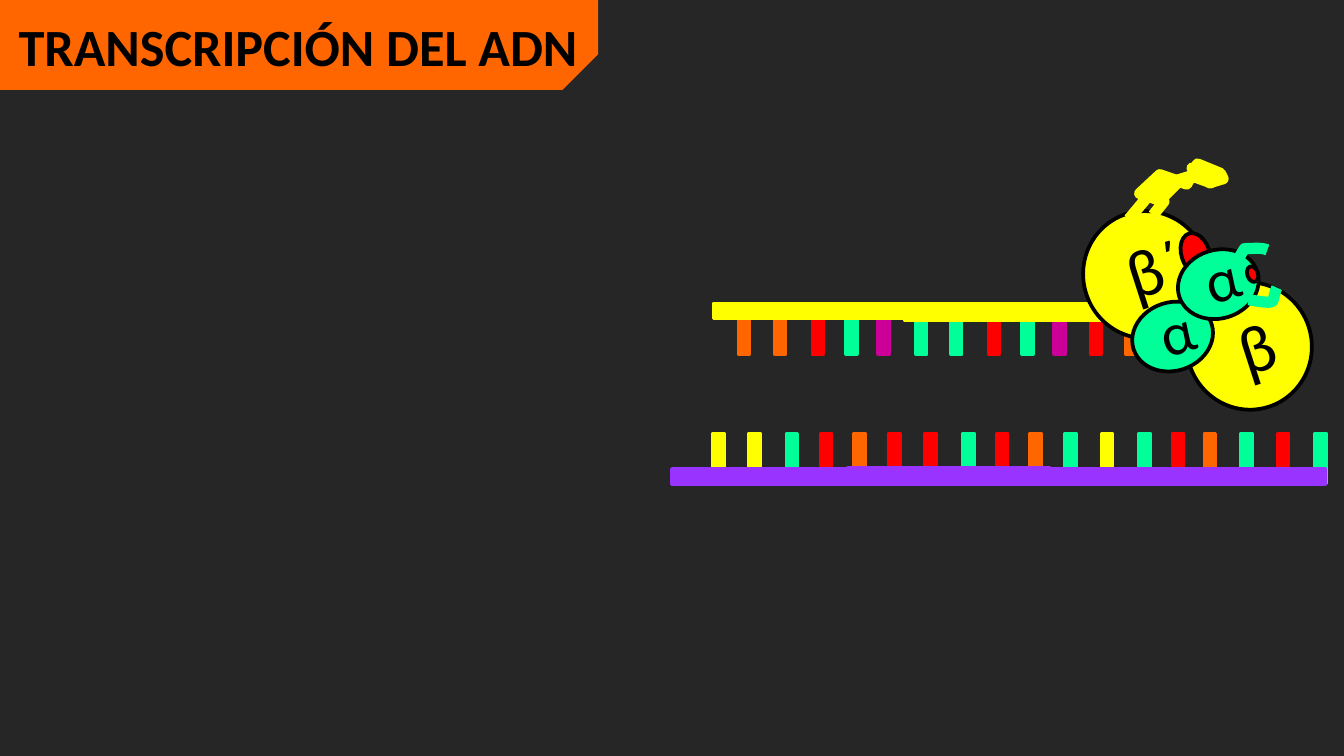
from dataclasses import dataclass

from lxml import etree
from pptx import Presentation
from pptx.dml.color import RGBColor
from pptx.enum.shapes import MSO_CONNECTOR, MSO_SHAPE
from pptx.enum.text import MSO_AUTO_SIZE
from pptx.oxml.ns import qn
from pptx.util import Inches, Pt

RECTANGLE = MSO_SHAPE.RECTANGLE
OVAL = MSO_SHAPE.OVAL
SNIPPED = MSO_SHAPE.SNIP_1_RECTANGLE
STRAIGHT = MSO_CONNECTOR.STRAIGHT
GROW = MSO_AUTO_SIZE.SHAPE_TO_FIT_TEXT


@dataclass(frozen=True)
class Theme:
    """Colours, type sizes and line widths of the slide."""
    background: str = "262626"
    ink: str = "000000"
    orange: str = "FF6600"
    yellow: str = "FFFF00"
    green: str = "00FF99"
    red: str = "FF0000"
    magenta: str = "CC0099"
    purple: str = "9933FF"
    font: str = "Calibri"
    title_size: int = 28
    alpha_size: int = 32
    beta_size: int = 36
    outline: int = 2
    thread: int = 6
    tilt: float = 342.1


THEME = Theme()
BASE_COLOURS = {"O": THEME.orange, "Y": THEME.yellow, "G": THEME.green,
                "R": THEME.red, "M": THEME.magenta}
BASE_LENGTH, BASE_THICKNESS = 0.37, 0.08
UPRIGHT = 270


def rgb(colour):
    """Turn a hex string into a colour."""
    return RGBColor.from_string(colour)


def paint(shape, fill=None, line=None, width=THEME.outline):
    """Give a shape its fill and line, without a shadow."""
    shape.shadow.inherit = False
    if fill:
        shape.fill.solid()
        shape.fill.fore_color.rgb = rgb(fill)
    else:
        shape.fill.background()
    if line:
        shape.line.color.rgb = rgb(line)
        shape.line.width = Pt(width)
    else:
        shape.line.fill.background()


def add_part(slide, kind, box, fill, line=None, rotation=0):
    """Add a painted preset shape in the given box."""
    part = slide.shapes.add_shape(kind, *map(Inches, box))
    part.rotation = rotation
    paint(part, fill, line)
    return part


def add_label(slide, box, text, size, bold=False, wrap=True, rotation=0):
    """Add a one-run text box in the given box."""
    label = slide.shapes.add_textbox(*map(Inches, box))
    label.rotation = rotation
    label.text_frame.word_wrap = wrap
    label.text_frame.auto_size = GROW
    run = label.text_frame.paragraphs[0].add_run()
    run.text = text
    run.font.name = THEME.font
    run.font.size = Pt(size)
    run.font.bold = bold
    run.font.color.rgb = rgb(THEME.ink)


def add_thread(slide, points, colour, fill=None):
    """Draw an open outline through the given points."""
    start, *rest = [(Inches(x), Inches(y)) for x, y in points]
    builder = slide.shapes.build_freeform(*start)
    builder.add_line_segments(rest, close=False)
    paint(builder.convert_to_shape(), fill, colour, THEME.thread)


def add_leg(slide, start, end, colour):
    """Draw a straight thick line between two points."""
    leg = slide.shapes.add_connector(STRAIGHT, *map(Inches, start + end))
    leg.line.color.rgb = rgb(colour)
    leg.line.width = Pt(THEME.thread)
    etree.SubElement(leg.element.spPr, qn("a:effectLst"))


def curve(start, control_1, control_2, end, steps=8):
    """Return points along a cubic curve, without its start."""
    def at(t, axis):
        u = 1 - t
        return (u ** 3 * start[axis] + 3 * u * u * t * control_1[axis]
                + 3 * u * t * t * control_2[axis] + t ** 3 * end[axis])
    return [(at(i / steps, 0), at(i / steps, 1)) for i in range(1, steps + 1)]


def add_title(slide, left, top, width, height):
    """Place the title on its banner with a snipped lower corner."""
    banner = add_part(slide, SNIPPED, (left, top, width, height), THEME.orange)
    banner.adjustments[0] = 0.395
    banner.element.spPr.xfrm.set("flipV", "1")
    add_label(slide, (left + 0.04, top + 0.06, width - 0.04, height - 0.1),
              "TRANSCRIPCIÓN DEL ADN", THEME.title_size, bold=True, wrap=False)


def add_strand(slide, left, top, bases, offsets, base_top, backbone, colour):
    """Place a row of upright bases and the backbone pieces that carry them."""
    for base, offset in zip(bases, offsets, strict=True):
        tint = BASE_COLOURS[base]
        box = (left + offset, top + base_top, BASE_LENGTH, BASE_THICKNESS)
        add_part(slide, RECTANGLE, box, tint, tint, UPRIGHT)
    for x, y, width, height in backbone:
        add_part(slide, RECTANGLE, (left + x, top + y, width, height), colour, colour)


def add_polymerase(slide, left, top):
    """Place the tilted enzyme subunits with their threads."""
    def place(points):
        return [(left + x, top + y) for x, y in points]

    def subunit(x, y, width, height, fill):
        add_part(slide, OVAL, (left + x, top + y, width, height), fill,
                 THEME.ink, THEME.tilt)

    def symbol(x, y, width, height, text, size):
        add_label(slide, (left + x, top + y, width, height), text, size,
                  rotation=THEME.tilt)

    def alpha(x, y):
        subunit(x, y, 0.61, 0.51, THEME.green)
        symbol(x + 0.11, y - 0.09, 0.32, 0.64, "α", THEME.alpha_size)

    subunit(0.77, 0.85, 0.93, 0.95, THEME.yellow)
    subunit(0, 0.32, 0.93, 0.95, THEME.yellow)
    alpha(0.36, 1)
    joints = place([(0.34, 0.38), (0.54, 0.14), (0.8, 0.06)])
    for start, end in zip(joints, joints[1:]):
        add_leg(slide, start, end, THEME.yellow)
    symbol(0.22, 0.37, 0.69, 0.71, "β´", THEME.beta_size)
    subunit(0.73, 0.48, 0.21, 0.32, THEME.red)
    clamp = [(0.52, 0.35), (0.6, 0.25), (0.42, 0.19), (0.57, 0.05), (0.77, 0.12),
             (0.85, -0.03), (1.02, 0.04), (1.04, 0.08), (0.94, 0.11), (0.93, 0.02),
             (0.81, 0), (0.86, 0.05), (0.96, 0.06), (0.95, 0.11), (0.81, 0.06)]
    add_thread(slide, place(clamp), THEME.yellow, THEME.yellow)
    symbol(1.06, 0.99, 0.32, 0.71, "β", THEME.beta_size)
    alpha(0.7, 0.61)
    bend = (1.2, 0.6)
    upper_tail = [(1.12, 0.73), bend, *curve(bend, (1.26, 0.6), (1.33, 0.59), (1.37, 0.61))]
    add_thread(slide, place(upper_tail), THEME.green)
    subunit(1.22, 0.73, 0.08, 0.12, THEME.red)
    tip, turn = (1.23, 0.98), (1.41, 0.99)
    lower_tail = [tip, *curve(tip, (1.3, 0.99), (1.38, 1.01), turn),
                  *curve(turn, (1.42, 0.96), (1.43, 0.91), (1.44, 0.89))]
    add_thread(slide, place(lower_tail), THEME.green)


def main():
    """Build the slide and save it."""
    deck = Presentation()
    deck.slide_width = Inches(10)
    deck.slide_height = deck.slide_width * 9 // 16
    slide = deck.slides.add_slide(deck.slide_layouts[6])
    slide.background.fill.solid()
    slide.background.fill.fore_color.rgb = rgb(THEME.background)

    add_title(slide, 0, 0, 4.45, 0.67)
    add_strand(slide, 5, 3.48, "YYGRORRGROGYGROGRG",
               (0.16, 0.43, 0.71, 0.96, 1.21, 1.47, 1.74, 2.02, 2.27, 2.52,
                2.78, 3.05, 3.33, 3.58, 3.82, 4.09, 4.36, 4.64), -0.11,
               [(1.31, 0, 1.5, 0.12), (0, 0.01, 1.55, 0.11), (2.68, 0.01, 2.18, 0.11)],
               THEME.purple)
    add_strand(slide, 5.31, 2.26, "OORGMGGRGMRO",
               (0.04, 0.31, 0.59, 0.84, 1.08, 1.36, 1.62, 1.9, 2.15, 2.39, 2.66, 2.92), 0.15,
               [(1.42, 0, 1.92, 0.12), (0, 0, 1.63, 0.11)], THEME.yellow)
    add_polymerase(slide, 8.06, 1.25)
    deck.save("out.pptx")


if __name__ == "__main__":
    main()
